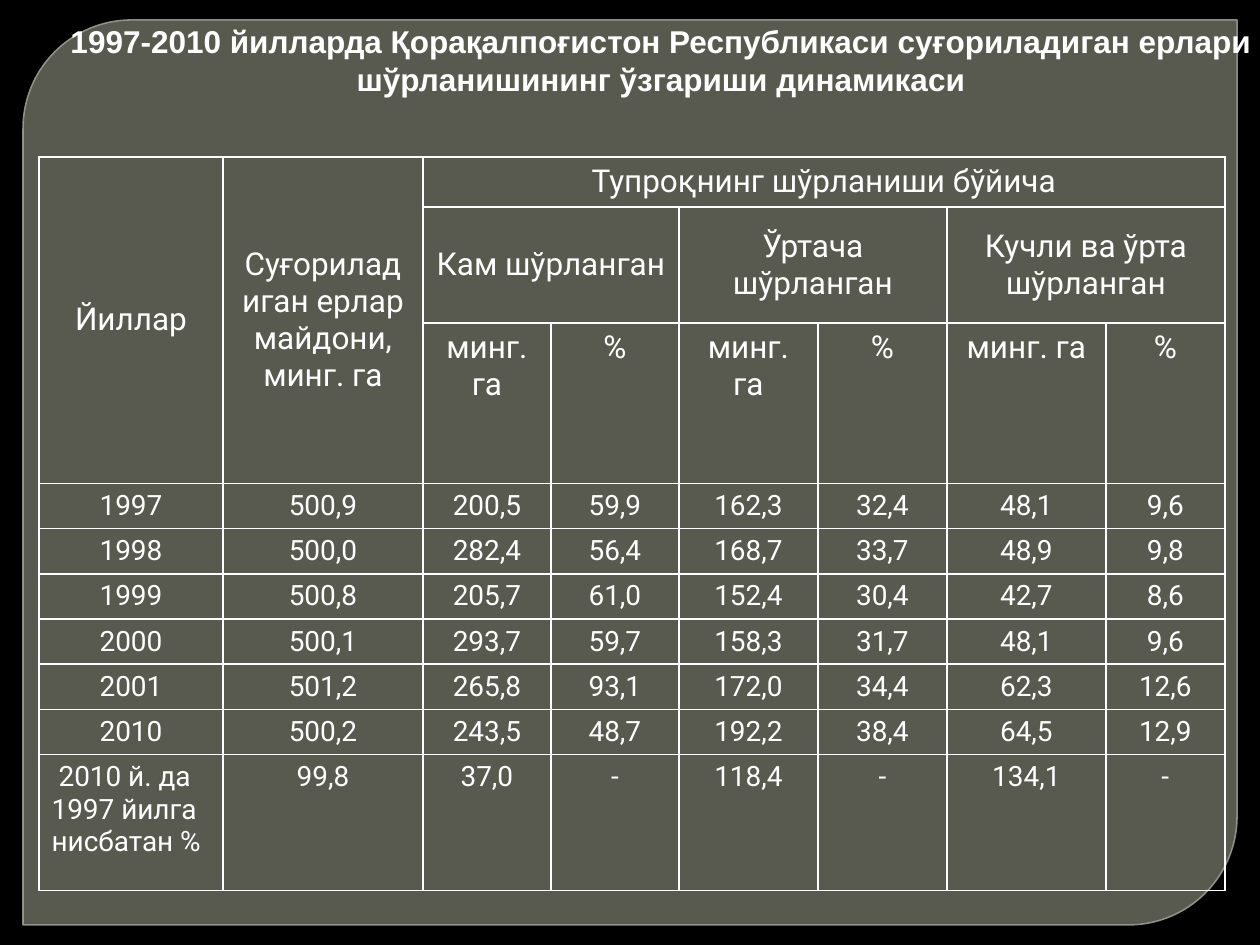
import lxml.etree
import pptx
import pptx.dml.color
import pptx.enum.shapes
import pptx.enum.text
import pptx.oxml.ns
import pptx.util

SCALE = 914400 / 126  # EMU per px
COLORS = {"back": "000000", "panel": "888B7B", "edge": "9DA090", "ink": "FFFFFF"}
CENTER = pptx.enum.text.PP_ALIGN.CENTER
LEFT = pptx.enum.text.PP_ALIGN.LEFT
TOP = pptx.enum.text.MSO_ANCHOR.TOP
MIDDLE = pptx.enum.text.MSO_ANCHOR.MIDDLE

TITLE = [
    "1997-2010 йилларда Қорақалпоғистон Республикаси суғориладиган ерлари",
    "шўрланишининг ўзгариши динамикаси",
]
COLUMN_WIDTHS = [184, 200, 128, 128, 139, 129, 159, 119]
ROW_HEIGHTS = [50, 116, 160] + [45] * 6 + [136]
# Heading cells: row, column, rows spanned, columns spanned, text
HEADINGS = [
    (0, 0, 3, 1, "Йиллар"),
    (0, 1, 3, 1, "Суғориладиган ерлар майдони, минг. га"),
    (0, 2, 1, 6, "Тупроқнинг шўрланиши бўйича"),
    (1, 2, 1, 2, "Кам шўрланган"),
    (1, 4, 1, 2, "Ўртача шўрланган"),
    (1, 6, 1, 2, "Кучли ва ўрта шўрланган"),
]
UNITS = ["минг. га", "%"] * 3
DATA = [
    ["1997", "500,9", "200,5", "59,9", "162,3", "32,4", "48,1", "9,6"],
    ["1998", "500,0", "282,4", "56,4", "168,7", "33,7", "48,9", "9,8"],
    ["1999", "500,8", "205,7", "61,0", "152,4", "30,4", "42,7", "8,6"],
    ["2000", "500,1", "293,7", "59,7", "158,3", "31,7", "48,1", "9,6"],
    ["2001", "501,2", "265,8", "93,1", "172,0", "34,4", "62,3", "12,6"],
    ["2010", "500,2", "243,5", "48,7", "192,2", "38,4", "64,5", "12,9"],
    ["2010 й. да 1997 йилга нисбатан %", "99,8", "37,0", "-", "118,4", "-", "134,1", "-"],
]


def px(length):
    return pptx.util.Emu(round(length * SCALE))


def rgb(name):
    return pptx.dml.color.RGBColor.from_string(COLORS[name])


def set_format(target, values):
    for name, value in values.items():
        setattr(target, name, value)


def write(para, text, size, font, bold=False, align=CENTER):
    para.alignment = align
    span = para.add_run()
    span.text = text
    set_format(span.font, {"size": pptx.util.Pt(size), "name": font, "bold": bold})
    span.font.color.rgb = rgb("ink")


def add_panel(page):
    panel = page.shapes.add_shape(
        pptx.enum.shapes.MSO_SHAPE.ROUND_2_DIAG_RECTANGLE,
        px(23), px(20), px(1214), px(905))
    panel.shadow.inherit = False
    panel.adjustments[0] = 0.12
    panel.adjustments[1] = 0
    panel.line.width = pptx.util.Pt(0.87)
    for fill, name in ((panel.fill, "panel"), (panel.line.fill, "edge")):
        fill.solid()
        fill.fore_color.rgb = rgb(name)
    # Opacity of the fill, then of the outline
    colors = panel._element.spPr.findall(".//" + pptx.oxml.ns.qn("a:srgbClr"))
    for color, percent in zip(colors, (65, 88)):
        lxml.etree.SubElement(color, pptx.oxml.ns.qn("a:alpha"), val=str(percent * 1000))


def add_title(page):
    box = page.shapes.add_textbox(px(52), px(16), px(1218), px(88))
    frame = box.text_frame
    set_format(frame, {"word_wrap": False, "vertical_anchor": MIDDLE})
    for index, text in enumerate(TITLE):
        para = frame.add_paragraph() if index else frame.paragraphs[0]
        write(para, text, 18, "Arial", bold=True)


def add_borders(cell):
    props = cell._tc.get_or_add_tcPr()
    for index, side in enumerate(("lnL", "lnR", "lnT", "lnB")):
        line = lxml.etree.Element(pptx.oxml.ns.qn("a:" + side), w="12700")
        fill = lxml.etree.SubElement(line, pptx.oxml.ns.qn("a:solidFill"))
        lxml.etree.SubElement(fill, pptx.oxml.ns.qn("a:srgbClr"), val=COLORS["ink"])
        props.insert(index, line)


def fill_cell(cell, text, size, anchor=TOP, align=CENTER):
    cell.vertical_anchor = anchor
    write(cell.text_frame.paragraphs[0], text, size, "Roboto", align=align)


def add_salinity_table(page):
    table = page.shapes.add_table(
        len(ROW_HEIGHTS), len(COLUMN_WIDTHS), px(39), px(157),
        px(sum(COLUMN_WIDTHS)), px(sum(ROW_HEIGHTS))).table
    set_format(table, {"first_row": False, "horz_banding": False})
    for column, width in zip(table.columns, COLUMN_WIDTHS):
        column.width = px(width)
    for row, height in zip(table.rows, ROW_HEIGHTS):
        row.height = px(height)
    for cell in table.iter_cells():
        cell.fill.background()
        add_borders(cell)

    # Headings and units
    for row, column, down, across, text in HEADINGS:
        cell = table.cell(row, column)
        cell.merge(table.cell(row + down - 1, column + across - 1))
        fill_cell(cell, text, 18, MIDDLE)
    for column, text in enumerate(UNITS, 2):
        fill_cell(table.cell(2, column), text, 18)

    # Yearly values, then the comparison row with its indented label
    for row, values in enumerate(DATA, 3):
        for column, text in enumerate(values):
            is_label = row == len(ROW_HEIGHTS) - 1 and column == 0
            fill_cell(table.cell(row, column), text, 16, align=LEFT if is_label else CENTER)
    label = table.cell(len(ROW_HEIGHTS) - 1, 0).text_frame.paragraphs[0]
    label._p.get_or_add_pPr().set("indent", str(int(px(7))))


def main():
    deck = pptx.Presentation()
    set_format(deck, {"slide_width": px(1260), "slide_height": px(945)})
    page = deck.slides.add_slide(deck.slide_layouts[6])
    page.background.fill.solid()
    page.background.fill.fore_color.rgb = rgb("back")
    add_panel(page)
    add_salinity_table(page)
    add_title(page)
    deck.save("out.pptx")


if __name__ == "__main__":
    main()
